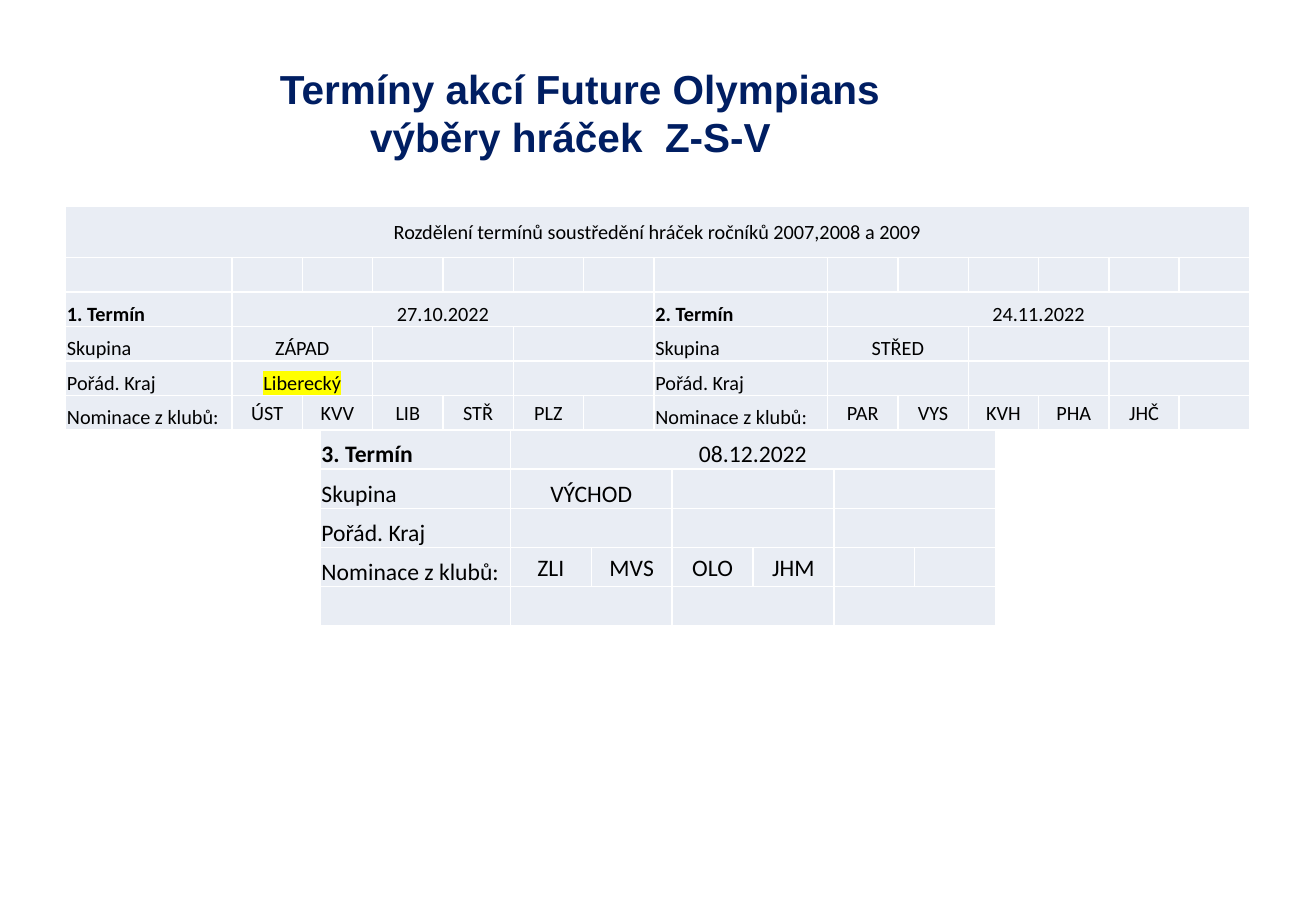
import pptx
import pptx.dml.color
import pptx.enum.text
import pptx.oxml.ns
import pptx.util
from dataclasses import dataclass
from lxml import etree

Cm = pptx.util.Cm
Align = pptx.enum.text.PP_ALIGN
Anchor = pptx.enum.text.MSO_ANCHOR


@dataclass(frozen=True)
class Theme:
    title_color: str = "001E62"
    text_color: str = "000000"
    cell_color: str = "E9EDF4"
    border_color: str = "FFFFFF"
    highlight_color: str = "FFFF00"
    title_font: str = "Arial"
    table_font: str = "Calibri"
    title_size: int = 24
    upper_size: int = 12
    lower_size: int = 14
    border_width: int = 1


theme = Theme()


def add_child(parent, tag, **attributes):
    return etree.SubElement(parent, pptx.oxml.ns.qn(tag), **attributes)


def write_text(paragraph, text, size, font=theme.table_font, color=theme.text_color,
               bold=False, align=Align.LEFT, highlight=None):
    paragraph.alignment = align
    run = paragraph.add_run()
    run.text = text
    run.font.size = pptx.util.Pt(size)
    run.font.bold = bold
    run.font.color.rgb = pptx.dml.color.RGBColor.from_string(color)
    if highlight:
        add_child(add_child(run.font._element, "a:highlight"), "a:srgbClr", val=highlight)
    run.font.name = font


presentation = pptx.Presentation()
presentation.slide_width = Cm(27.51)
presentation.slide_height = Cm(19.05)
slide = presentation.slides.add_slide(presentation.slide_layouts[6])

title = slide.shapes.add_textbox(Cm(1.37), Cm(0.76), Cm(21.97), Cm(3.18)).text_frame
title.word_wrap = True
title.vertical_anchor = Anchor.MIDDLE
title_lines = [("Termíny akcí Future Olympians", 4.23), ("výběry hráček  Z-S-V", 6.12)]
for index, (line, indent) in enumerate(title_lines):
    paragraph = title.add_paragraph() if index else title.paragraphs[0]
    paragraph._p.get_or_add_pPr().set("marL", str(Cm(indent)))
    write_text(paragraph, line, theme.title_size, font=theme.title_font,
               color=theme.title_color, bold=True)

labels = ["Skupina", "Pořád. Kraj", "Nominace z klubů:"]
clubs_per_term = 6
schedules = [
    dict(left=1.37, top=4.32, label_widths=[3.48, 3.63], club_width=1.47,
         row_heights=[1.07] + [0.72] * 5, size=theme.upper_size,
         heading="Rozdělení termínů soustředění hráček ročníků 2007,2008 a 2009", first_row=2,
         terms=[("1. Termín", "27.10.2022", "ZÁPAD", "Liberecký", ["ÚST", "KVV", "LIB", "STŘ", "PLZ"]),
                ("2. Termín", "24.11.2022", "STŘED", "", ["PAR", "VYS", "KVH", "PHA", "JHČ"])]),
    dict(left=6.69, top=8.99, label_widths=[3.98], club_width=1.69,
         row_heights=[0.82] * 5, size=theme.lower_size, heading="", first_row=0,
         terms=[("3. Termín", "08.12.2022", "VÝCHOD", "", ["ZLI", "MVS", "OLO", "JHM"])]),
]

for schedule in schedules:
    size, first_row, heights = schedule["size"], schedule["first_row"], schedule["row_heights"]
    widths = []
    for label_width in schedule["label_widths"]:
        widths += [label_width] + [schedule["club_width"]] * clubs_per_term
    table = slide.shapes.add_table(
        len(heights), len(widths), Cm(schedule["left"]), Cm(schedule["top"]),
        Cm(sum(widths)), Cm(sum(heights))).table
    table.first_row = False
    table.horz_banding = False
    for column, width in zip(table.columns, widths):
        column.width = Cm(width)
    for row, height in zip(table.rows, heights):
        row.height = Cm(height)

    contents = {}
    if schedule["heading"]:
        table.cell(0, 0).merge(table.cell(0, len(widths) - 1))
        contents[0, 0] = schedule["heading"], Anchor.MIDDLE, dict(align=Align.CENTER)
    for index, (name, date, group, region, clubs) in enumerate(schedule["terms"]):
        start = index * (clubs_per_term + 1)
        table.cell(first_row, start + 1).merge(table.cell(first_row, start + clubs_per_term))
        for row in [first_row + 1, first_row + 2, *range(first_row + 4, len(heights))]:
            for column in range(start + 1, start + clubs_per_term, 2):
                table.cell(row, column).merge(table.cell(row, column + 1))
        for offset, label in enumerate([name] + labels):
            contents[first_row + offset, start] = label, Anchor.BOTTOM, dict(bold=offset == 0)
        for offset, value in enumerate([date, group, region]):
            highlight = theme.highlight_color if value and value == region else None
            contents[first_row + offset, start + 1] = (
                value, Anchor.BOTTOM, dict(align=Align.CENTER, highlight=highlight))
        for offset, club in enumerate(clubs):
            contents[first_row + 3, start + 1 + offset] = (
                club, Anchor.MIDDLE, dict(align=Align.CENTER))

    for row in range(len(heights)):
        for column in range(len(widths)):
            cell = table.cell(row, column)
            cell.margin_left = cell.margin_right = cell.margin_top = Cm(0.03)
            cell.margin_bottom = 0
            properties = cell._tc.get_or_add_tcPr()
            for side in ("a:lnL", "a:lnR", "a:lnT", "a:lnB"):
                border = add_child(properties, side, w=str(pptx.util.Pt(theme.border_width)))
                add_child(add_child(border, "a:solidFill"), "a:srgbClr", val=theme.border_color)
            cell.fill.solid()
            cell.fill.fore_color.rgb = pptx.dml.color.RGBColor.from_string(theme.cell_color)
            text, anchor, text_format = contents.get((row, column), ("", Anchor.MIDDLE, {}))
            cell.vertical_anchor = anchor
            paragraph = cell.text_frame.paragraphs[0]
            if text:
                write_text(paragraph, text, size, **text_format)
            else:
                paragraph._p.get_or_add_endParaRPr().set("sz", str(size * 100))

presentation.save("out.pptx")
